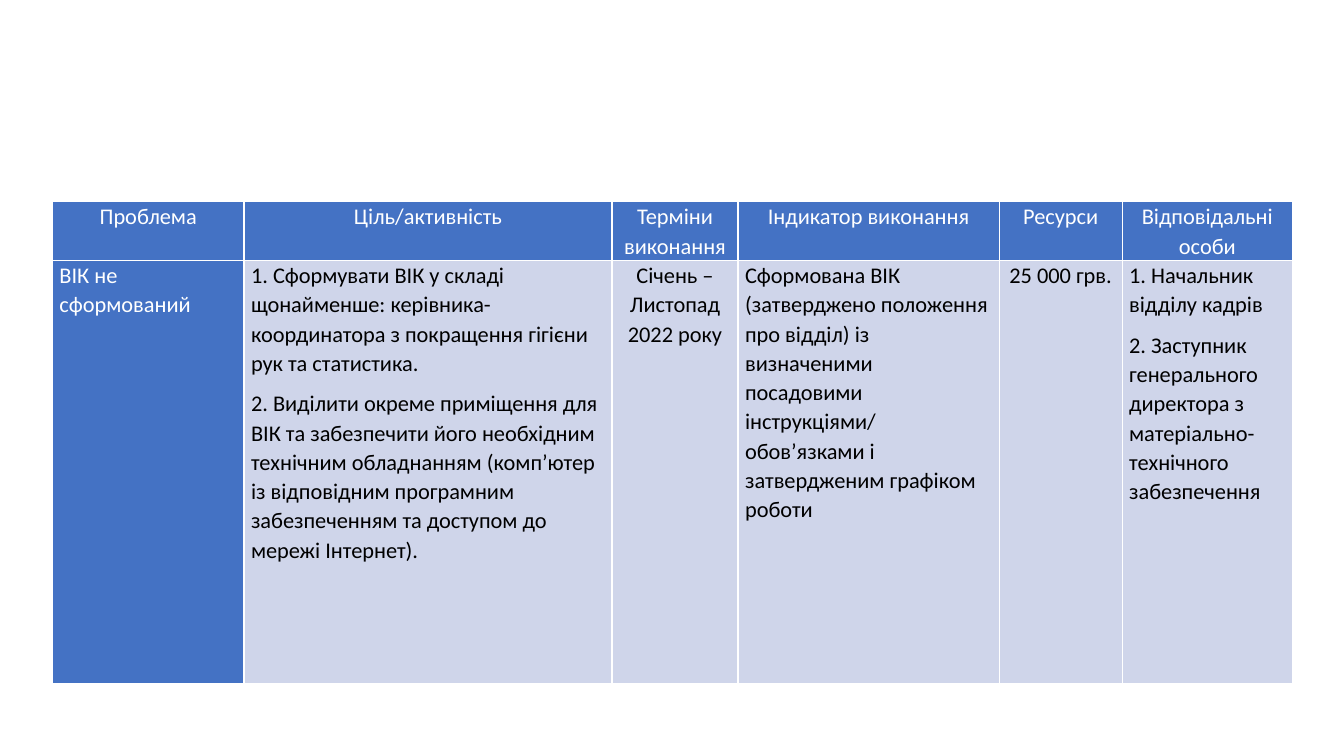
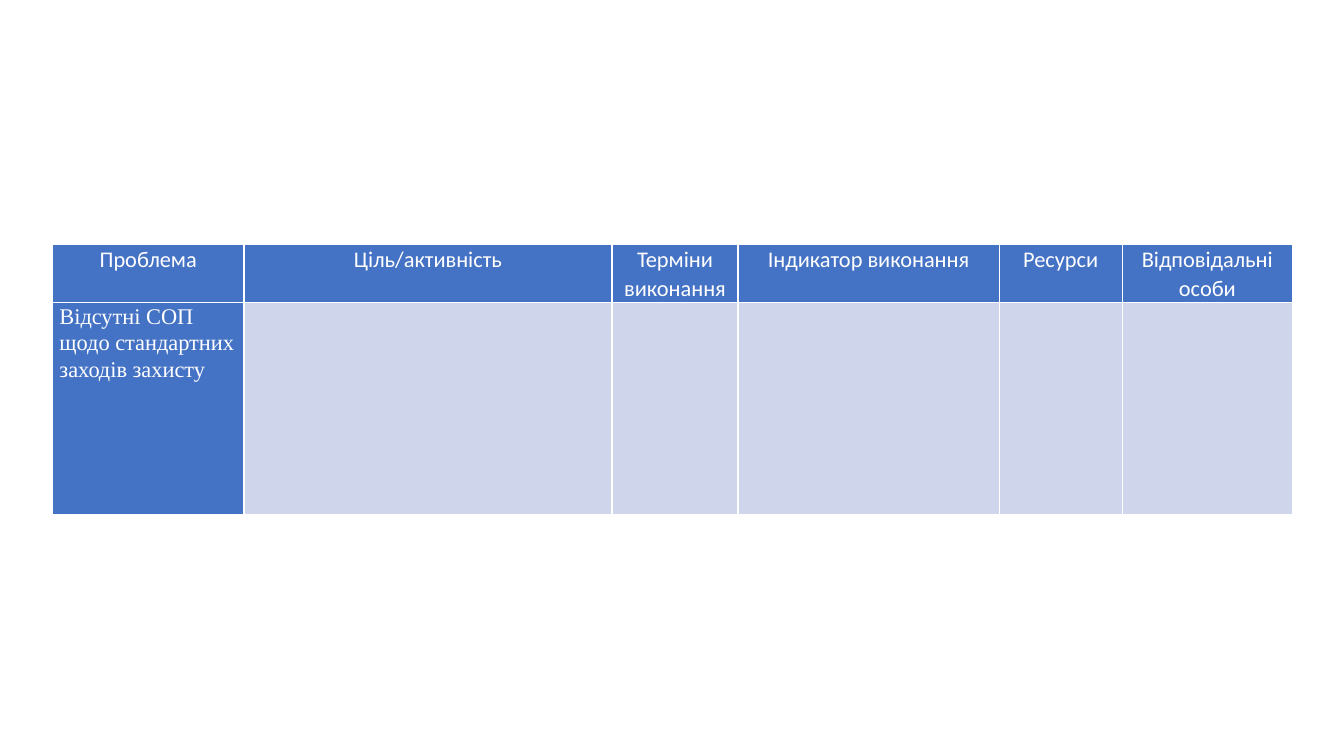
import dataclasses

import lxml.etree
import pptx
import pptx.dml.color
import pptx.enum.text
import pptx.oxml.ns
import pptx.util

PX = 9144
LEFT = pptx.enum.text.PP_ALIGN.LEFT
MID = pptx.enum.text.PP_ALIGN.CENTER


@dataclasses.dataclass(frozen=True)
class Theme:
    blue: str = "4472C4"
    pale: str = "CFD5EA"
    white: str = "FFFFFF"
    black: str = "000000"
    sans: str = "Calibri"
    serif: str = "Times New Roman"
    size: int = 16
    rule: int = 1
    lead: float = 1.07
    after: int = 8


def px(num):
    return pptx.util.Emu(num * PX)


def tint(code):
    return pptx.dml.color.RGBColor.from_string(code)


def put(item, form):
    for key, val in form.items():
        setattr(item, key, val)


class Deck:
    """Holds the theme, the file and the current slide."""

    def __init__(self, theme):
        self.theme = theme
        self.file = pptx.Presentation()
        put(self.file, {"slide_width": px(1333), "slide_height": px(750)})
        self.slide = None

    def page(self):
        self.slide = self.file.slides.add_slide(self.file.slide_layouts[6])

    def edge(self, cell):
        props = cell._tc.get_or_add_tcPr()
        name = pptx.oxml.ns.qn
        for side in ("lnL", "lnR", "lnT", "lnB"):
            line = lxml.etree.SubElement(
                props, name("a:" + side), w=str(pptx.util.Pt(self.theme.rule)))
            fill = lxml.etree.SubElement(line, name("a:solidFill"))
            lxml.etree.SubElement(fill, name("a:srgbClr"), val=self.theme.white)

    def cell(self, cell, lines, fill, ink, face, align):
        self.edge(cell)
        cell.fill.solid()
        cell.fill.fore_color.rgb = tint(fill)
        put(cell, {"margin_left": px(7), "margin_right": px(7),
                   "margin_top": 0, "margin_bottom": 0})
        cell.text_frame.text = "\n".join(lines)
        for para in cell.text_frame.paragraphs:
            put(para, {"alignment": align, "line_spacing": self.theme.lead,
                       "space_after": pptx.util.Pt(self.theme.after)})
            for run in para.runs:
                put(run.font, {"size": pptx.util.Pt(self.theme.size),
                               "name": face, "bold": False})
                run.font.color.rgb = tint(ink)

    def table(self, top, tall, wide, head, body, face):
        look = self.theme
        grid = self.slide.shapes.add_table(
            2, len(wide), px(52), px(top), px(sum(wide)), px(sum(tall))).table
        put(grid, {"first_row": False, "horz_banding": False})
        for row, high in zip(grid.rows, tall):
            row.height = px(high)
        for col, span in enumerate(wide):
            grid.columns[col].width = px(span)
            self.cell(grid.cell(0, col), [head[col]],
                      look.blue, look.white, look.sans, MID)
            fill, ink, font = ((look.pale, look.black, look.sans) if col
                               else (look.blue, look.white, face))
            self.cell(grid.cell(1, col), body[col], fill, ink, font,
                      MID if col in (2, 4) else LEFT)


WIDE = [190, 365, 125, 259, 122, 169]
HEAD = ["Проблема", "Ціль/активність", "Терміни виконання",
        "Індикатор виконання", "Ресурси", "Відповідальні особи"]
TEAM = [
    ["ВІК не сформований"],
    ["1. Сформувати ВІК у складі щонайменше: керівника-координатора "
     "з покращення гігієни рук та статистика.",
     "2. Виділити окреме приміщення для ВІК та забезпечити його необхідним "
     "технічним обладнанням (комп’ютер із відповідним програмним "
     "забезпеченням та доступом до мережі Інтернет)."],
    ["Січень – Листопад 2022 року"],
    ["Сформована ВІК (затверджено положення про відділ) із визначеними "
     "посадовими інструкціями/ обов’язками і затвердженим графіком роботи"],
    ["25 000 грв."],
    ["1. Начальник відділу кадрів",
     "2. Заступник генерального директора з матеріально-технічного "
     "забезпечення"],
]
RULES = [["Відсутні СОП щодо стандартних заходів захисту"]] + [[]] * 5


def main():
    theme = Theme()
    deck = Deck(theme)
    for top, high, body, face in ((200, 420, TEAM, theme.sans),
                                  (242, 210, RULES, theme.serif)):
        deck.page()
        deck.table(top, [57, high], WIDE, HEAD, body, face)
    deck.file.save("out.pptx")


if __name__ == "__main__":
    main()
